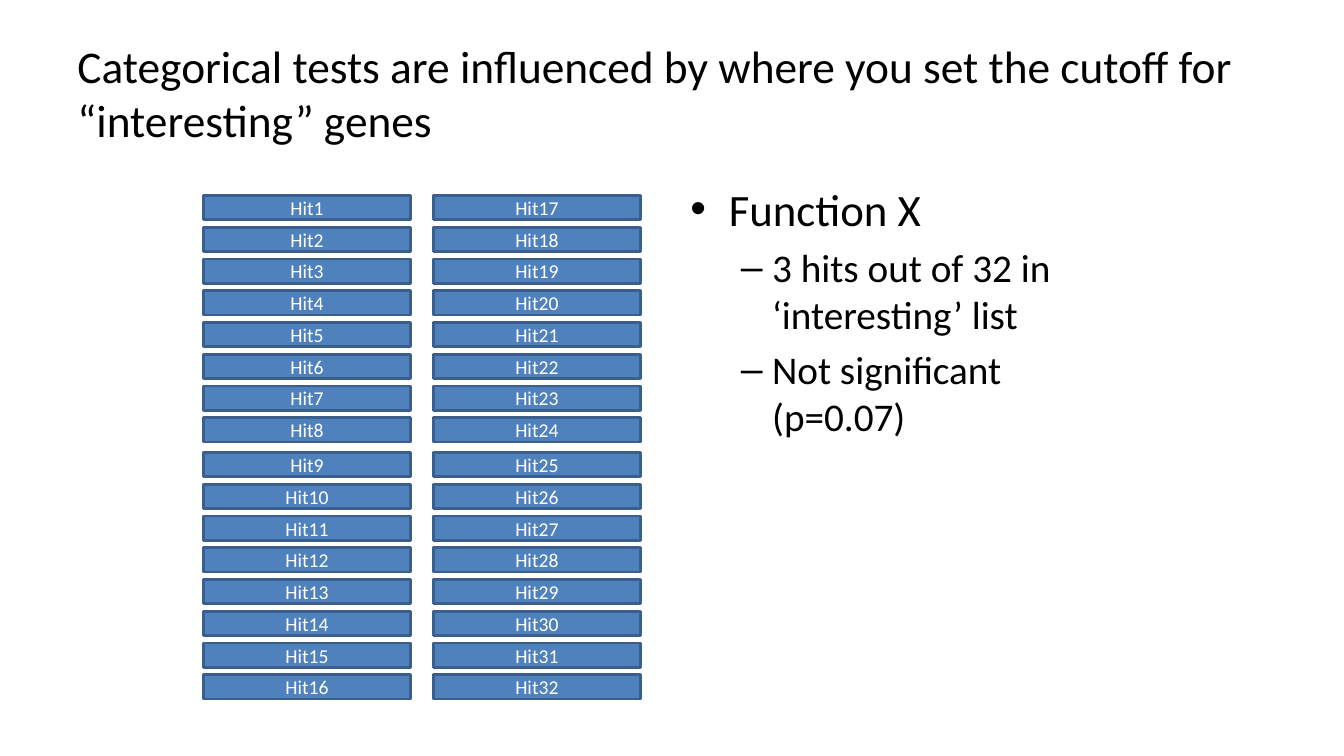
from dataclasses import dataclass

from lxml.etree import SubElement
from pptx import Presentation
from pptx.dml.color import RGBColor
from pptx.enum.shapes import MSO_SHAPE as Shape
from pptx.enum.text import MSO_ANCHOR as Anchor, PP_ALIGN as Align
from pptx.oxml.ns import qn
from pptx.slide import Slide
from pptx.text.text import TextFrame, _Paragraph as Paragraph
from pptx.util import Inches, Pt

FONT = "Calibri"
BLACK = RGBColor(0x00, 0x00, 0x00)
WHITE = RGBColor(0xFF, 0xFF, 0xFF)
BLUE = RGBColor(0x4F, 0x81, 0xBD)
DARK_BLUE = RGBColor(0x3A, 0x5F, 0x8C)

# Hit grid: two columns, each split into two blocks of eight
COLUMNS = 2
BLOCKS = 2
BLOCK_ROWS = 8
GRID_LEFT, GRID_TOP = 2.02, 1.94
COLUMN_PITCH, BLOCK_PITCH, ROW_PITCH = 2.28, 2.55, 0.315
HIT_WIDTH, HIT_HEIGHT = 2.05, 0.24


@dataclass(frozen=True)
class BulletStyle:
    char: str
    level: int
    margin: float
    hanging: float
    size: float


@dataclass(frozen=True)
class Bullet:
    text: str
    style: BulletStyle


MAIN = BulletStyle("•", 0, 0.38, 0.38, 32)
SUB = BulletStyle("–", 1, 0.81, 0.31, 28)

FINDINGS = [
    Bullet("Function X", MAIN),
    Bullet("3 hits out of 32 in ‘interesting’ list", SUB),
    Bullet("Not significant (p=0.07)", SUB),
]


def write(p: Paragraph, text: str, *, size: float, color: RGBColor = BLACK,
          align: Align = Align.LEFT) -> None:
    p.alignment = align
    r = p.add_run()
    r.text = text
    r.font.name = FONT
    r.font.size = Pt(size)
    r.font.color.rgb = color


def add_text_frame(slide: Slide, left: float, top: float, width: float,
                   height: float, anchor: Anchor = Anchor.TOP) -> TextFrame:
    sp = slide.shapes.add_textbox(Inches(left), Inches(top),
                                  Inches(width), Inches(height))
    tf = sp.text_frame
    tf.word_wrap = True
    tf.vertical_anchor = anchor
    return tf


def add_bullet(p: Paragraph, bullet: Bullet) -> None:
    style = bullet.style
    p.level = style.level
    p.space_before = Pt(0.2 * style.size)
    write(p, bullet.text, size=style.size)
    pPr = p._p.get_or_add_pPr()
    pPr.set("marL", str(Inches(style.margin)))
    pPr.set("indent", str(-Inches(style.hanging)))
    SubElement(pPr, qn("a:buFont")).set("typeface", "Arial")
    SubElement(pPr, qn("a:buChar")).set("char", style.char)


def add_hit(slide: Slide, number: int, left: float, top: float) -> None:
    sp = slide.shapes.add_shape(Shape.RECTANGLE, Inches(left), Inches(top),
                                Inches(HIT_WIDTH), Inches(HIT_HEIGHT))
    sp.shadow.inherit = False
    sp.fill.solid()
    sp.fill.fore_color.rgb = BLUE
    sp.line.color.rgb = DARK_BLUE
    sp.line.width = Pt(2)
    tf = sp.text_frame
    tf.vertical_anchor = Anchor.MIDDLE
    write(tf.paragraphs[0], f"Hit{number}", size=14, color=WHITE,
          align=Align.CENTER)


def main() -> None:
    prs = Presentation()
    prs.slide_width, prs.slide_height = Inches(13.33), Inches(7.5)
    slide = prs.slides.add_slide(prs.slide_layouts[6])

    # Title
    tf = add_text_frame(slide, 0.67, 0.29, 12, 1.25, Anchor.MIDDLE)
    write(tf.paragraphs[0], "Categorical tests are influenced by where you "
          "set the cutoff for “interesting” genes", size=32.4)

    # Findings
    tf = add_text_frame(slide, 6.75, 1.75, 4.42, 4.95)
    for i, bullet in enumerate(FINDINGS):
        add_bullet(tf.add_paragraph() if i else tf.paragraphs[0], bullet)

    # Hits, numbered down each column
    for i in range(COLUMNS * BLOCKS * BLOCK_ROWS):
        column, place = divmod(i, BLOCKS * BLOCK_ROWS)
        block, row = divmod(place, BLOCK_ROWS)
        add_hit(slide, i + 1, GRID_LEFT + column * COLUMN_PITCH,
                GRID_TOP + block * BLOCK_PITCH + row * ROW_PITCH)

    prs.save("out.pptx")


if __name__ == "__main__":
    main()
